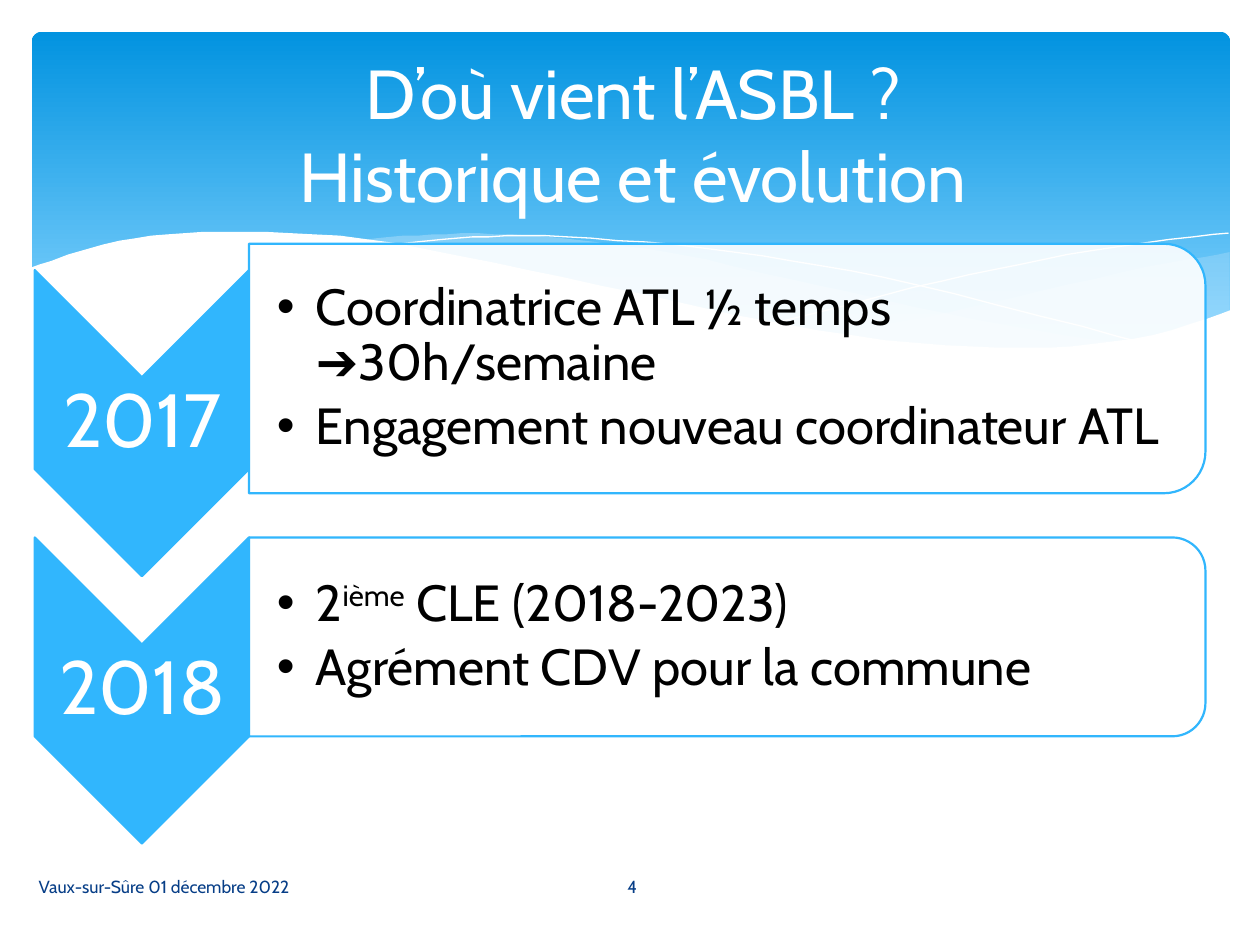
from dataclasses import dataclass

from lxml import etree
from pptx import Presentation, util as u
from pptx.dml.color import RGBColor
from pptx.enum import shapes, text
from pptx.oxml import ns

FONT = "Cabin"
WHITE = RGBColor(0xFF, 0xFF, 0xFF)
BLACK = RGBColor(0x00, 0x00, 0x00)
SKY = RGBColor(0x31, 0xB6, 0xFD)
PALE = RGBColor(0xC6, 0xE7, 0xFC)
NAVY = RGBColor(0x07, 0x3E, 0x87)
BANNER_TOP = RGBColor(0x02, 0x93, 0xE0)
BANNER_END = RGBColor(0x83, 0xD3, 0xFE)

WAVE_UNIT = u.Cm(0.0254)  # wave points are hundredths of an inch
STEPS = 6  # segments between two wave points

Point = tuple[float, float]


@dataclass
class Wave:
    edges: list[list[Point]]  # each edge is smooth, corners lie between edges
    fill: RGBColor | None = None
    opacity: int = 100


@dataclass
class Milestone:
    year: str
    chevron_middle: float  # cm
    panel_middle: float
    panel_height: float
    bullets: list[str]  # text between ^ marks is raised


WAVES = [
    Wave([[(976, 200), (891, 216), (753, 248), (661, 265)],
          [(661, 265), (745, 275), (835, 277), (913, 267), (976, 247)]], PALE, 29),
    Wave([[(893, 273), (775, 254), (629, 222), (528, 200), (420, 187), (344, 186), (286, 191)],
          [(286, 191), (404, 211), (566, 248), (695, 270), (796, 278), (893, 273)]], PALE, 40),
    Wave([[(309, 195), (363, 189), (450, 188), (582, 200), (727, 226), (907, 272)]]),
    Wave([[(613, 257), (748, 223), (866, 199), (975, 185)]]),
    Wave([[(977, 246), (899, 269), (793, 276), (648, 262), (447, 220), (292, 190), (177, 184),
           (95, 191), (23, 213)], [(23, 329), (977, 329)]], WHITE),
]

MILESTONES = [
    Milestone("2017", 8.53, 7.43, 5.03,
              ["Coordinatrice ATL ½ temps ➔30h/semaine",
               "Engagement nouveau coordinateur ATL"]),
    Milestone("2018", 13.92, 12.84, 4.01,
              ["2^ième^ CLE (2018-2023)", "Agrément CDV pour la commune"]),
]


def smooth(knots: list[Point]) -> list[Point]:
    """Points of a Catmull-Rom curve through the knots."""
    padded = [knots[0], *knots, knots[-1]]
    points = [knots[0]]
    for a, b, c, d in zip(padded, padded[1:], padded[2:], padded[3:]):
        for step in range(1, STEPS + 1):
            t = step / STEPS
            points.append(tuple(
                q + t * (r - p) / 2 + t ** 2 * (2 * p - 5 * q + 4 * r - s) / 2
                + t ** 3 * (3 * q - p - 3 * r + s) / 2
                for p, q, r, s in zip(a, b, c, d)))
    return points


def set_opacity(shape, percent: int) -> None:
    color = shape.fill._xPr.find(ns.qn("a:solidFill"))[0]
    etree.SubElement(color, ns.qn("a:alpha")).set("val", str(percent * 1000))


def place(shape, left: float, top: float, width: float, height: float) -> None:
    shape.left, shape.top = u.Cm(left), u.Cm(top)
    shape.width, shape.height = u.Cm(width), u.Cm(height)


def write(box, paragraphs: list[str], *, size: float, color: RGBColor,
          align=text.PP_ALIGN.LEFT, spacing: float = 1.0, after: float = 0,
          insets: tuple[float, float] = (0.25, 0.13), bullet: bool = False) -> None:
    """Fill a box; insets are the left one, then the one for the other sides."""
    frame = box.text_frame
    frame.word_wrap = True
    frame.auto_size = text.MSO_AUTO_SIZE.NONE
    frame.vertical_anchor = text.MSO_ANCHOR.MIDDLE
    frame.margin_left = u.Cm(insets[0])
    frame.margin_top = frame.margin_right = frame.margin_bottom = u.Cm(insets[1])
    for number, content in enumerate(paragraphs):
        para = frame.add_paragraph() if number else frame.paragraphs[0]
        para.alignment, para.line_spacing = align, spacing
        para.space_before, para.space_after = u.Pt(0), u.Pt(after)
        if bullet:
            props = para._p.get_or_add_pPr()
            props.set("marL", str(u.Cm(0.79)))
            props.set("indent", str(-u.Cm(0.79)))
            etree.SubElement(props, ns.qn("a:buChar")).set("char", "•")
        for row, line in enumerate(content.split("\n")):
            if row:
                para.add_line_break()
            for index, piece in enumerate(line.split("^")):
                span = para.add_run()
                span.text = piece
                span.font.name, span.font.size = FONT, u.Pt(size)
                span.font.color.rgb = color
                if index % 2:
                    span.font._element.set("baseline", "30000")


def add_text(page, area: tuple[float, float, float, float], content: str, **style) -> None:
    box = page.shapes.add_textbox(0, 0, 0, 0)
    place(box, *area)
    write(box, [content], **style)


def draw_wave(page, wave: Wave) -> None:
    points = [point for edge in wave.edges for point in smooth(edge)]
    builder = page.shapes.build_freeform(*points[0], scale=WAVE_UNIT)
    builder.add_line_segments(points[1:], close=wave.fill is not None)
    shape = builder.convert_to_shape()
    shape.shadow.inherit = False
    if wave.fill is None:
        shape.fill.background()
        shape.line.color.rgb = WHITE
        shape.line.width = u.Pt(0)
    else:
        shape.fill.solid()
        shape.fill.fore_color.rgb = wave.fill
        set_opacity(shape, wave.opacity)
        shape.line.fill.background()


def draw_turned(page, kind, middle: Point, size: Point, fill: RGBColor):
    """Preset shape turned a quarter; size is the one before turning."""
    shape = page.shapes.add_shape(kind, 0, 0, 0, 0)
    place(shape, middle[0] - size[0] / 2, middle[1] - size[1] / 2, *size)
    shape.rotation = 90
    shape.shadow.inherit = False
    shape.fill.solid()
    shape.fill.fore_color.rgb = fill
    shape.line.color.rgb = SKY
    shape.line.width = u.Pt(1.25)
    return shape


def draw_milestone(page, item: Milestone, body) -> None:
    kinds = shapes.MSO_SHAPE
    draw_turned(page, kinds.CHEVRON, (2.86, item.chevron_middle), (6.17, 4.32), SKY)
    add_text(page, (0.71, item.chevron_middle - 0.93, 4.32, 1.86), item.year, size=43,
             color=WHITE, align=text.PP_ALIGN.CENTER, spacing=0.9, insets=(0.08, 0.08))
    panel = draw_turned(page, kinds.ROUND_2_SAME_RECTANGLE, (14.66, item.panel_middle),
                        (item.panel_height, 19.28), WHITE)
    set_opacity(panel, 90)
    page.shapes._spTree.append(body._element)  # list goes above its panel
    height = item.panel_height - 0.45
    place(body, 5, item.panel_middle - height / 2, 19.07, height)
    write(body, item.bullets, size=29, color=BLACK, spacing=0.9, after=5,
          insets=(0.58, 0.05), bullet=True)


def main() -> None:
    deck = Presentation()
    deck.slide_width, deck.slide_height = u.Cm(25.4), u.Cm(19.05)
    page = deck.slides.add_slide(deck.slide_layouts[3])
    title, *bodies = page.placeholders

    # Banner with waves
    banner = page.shapes.add_shape(shapes.MSO_SHAPE.ROUNDED_RECTANGLE, 0, 0, 0, 0)
    place(banner, 0.64, 0.64, 24.16, 6.86)
    banner.adjustments[0] = 0.03
    banner.shadow.inherit = False
    banner.line.fill.background()
    banner.fill.gradient()
    banner.fill.gradient_angle = 270
    for stop, color, position in zip(banner.fill.gradient_stops,
                                     (BANNER_TOP, BANNER_END), (0, 0.9)):
        stop.color.rgb, stop.position = color, position
    for wave in WAVES:
        draw_wave(page, wave)

    # Timeline
    for item, body in zip(MILESTONES, bodies):
        draw_milestone(page, item, body)

    # Title and footer
    page.shapes._spTree.append(title._element)
    place(title, 1.27, 0.94, 22.86, 3.48)
    write(title, ["D’où vient l’ASBL ?\nHistorique et évolution"], size=39.6, color=WHITE,
          align=text.PP_ALIGN.CENTER)
    add_text(page, (0.53, 17.37, 10.52, 1.02), "Vaux-sur-Sûre 01 décembre 2022",
             size=10, color=NAVY)
    add_text(page, (11.07, 17.37, 3.23, 1.02), "4", size=10, color=NAVY,
             align=text.PP_ALIGN.CENTER)

    deck.save("out.pptx")


if __name__ == "__main__":
    main()
